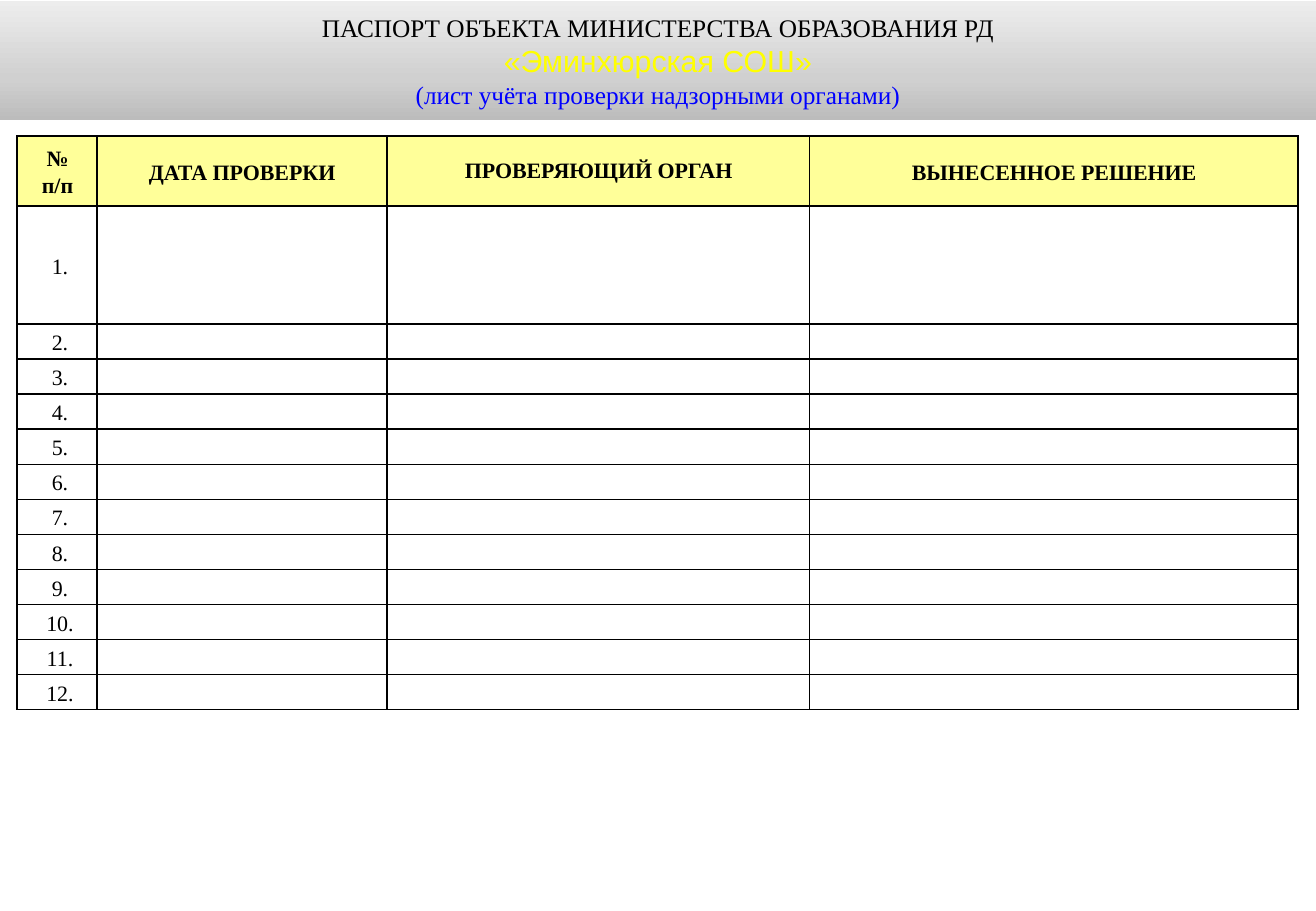
from copy import deepcopy
from dataclasses import dataclass

from lxml import etree
from pptx import Presentation
from pptx.dml.color import RGBColor
from pptx.enum.text import MSO_ANCHOR, MSO_AUTO_SIZE, PP_ALIGN
from pptx.oxml.ns import qn
from pptx.util import Pt

CENTER = PP_ALIGN.CENTER
MIDDLE = MSO_ANCHOR.MIDDLE
NO_FIT = MSO_AUTO_SIZE.NONE


@dataclass(frozen=True)
class Theme:
    serif: str = "Times New Roman"
    sans: str = "Arial"
    black: str = "000000"
    white: str = "FFFFFF"
    yellow: str = "FFFF00"
    blue: str = "0000FF"
    header_fill: str = "FFFF99"
    band: tuple = ((0, "BCBCBC"), (0.35, "D0D0D0"), (1, "EDEDED"))
    title_size: float = 15
    school_size: float = 18
    table_size: float = 13
    border: float = 1


@dataclass(frozen=True)
class TitleLine:
    text: str
    size: float
    font: str
    color: str


@dataclass(frozen=True)
class Column:
    heading: str
    width: float
    indent: float = 0
    spacing: object = 1.15


THEME = Theme()
TITLE = (
    TitleLine("ПАСПОРТ ОБЪЕКТА МИНИСТЕРСТВА ОБРАЗОВАНИЯ РД", THEME.title_size, THEME.serif, THEME.black),
    TitleLine("«Эминхюрская СОШ»", THEME.school_size, THEME.sans, THEME.yellow),
    TitleLine("(лист учёта проверки надзорными органами)", THEME.title_size, THEME.serif, THEME.blue),
)
COLUMNS = (
    Column("№\nп/п", 47.5, indent=0.7),
    Column("ДАТА ПРОВЕРКИ", 172),
    Column("ПРОВЕРЯЮЩИЙ ОРГАН", 250.5, spacing=Pt(14)),
    Column("ВЫНЕСЕННОЕ РЕШЕНИЕ", 289.5),
)
CHECKS = 12
HEADER_HEIGHT, FIRST_HEIGHT, ROW_HEIGHT = 41.5, 70, 20.8
NUMBER_INDENT = 3.6


def set_font(font, size: float, name: str, color: str, bold: bool = False) -> None:
    font.size, font.name, font.bold = Pt(size), name, bold
    font.color.rgb = RGBColor.from_string(color)


def fill_band(sp) -> None:
    """Fill the title with a vertical three-stop gradient."""
    sp.fill.gradient()
    sp.fill.gradient_angle = 90
    stops = sp._element.spPr.find(".//" + qn("a:gsLst"))
    stops.append(deepcopy(stops[0]))
    for stop, (position, color) in zip(sp.fill.gradient_stops, THEME.band):
        stop.position = position
        stop.color.rgb = RGBColor.from_string(color)


def draw_title(sp) -> None:
    sp.left, sp.top, sp.width, sp.height = Pt(0), Pt(0.7), Pt(780), Pt(70.5)
    fill_band(sp)
    tf = sp.text_frame
    tf.auto_size, tf.word_wrap, tf.vertical_anchor = NO_FIT, True, MIDDLE
    tf.text = "\n".join(line.text for line in TITLE)
    for p, line in zip(tf.paragraphs, TITLE):
        p.alignment = CENTER
        set_font(p.font, line.size, line.font, line.color)


def add_borders(cell) -> None:
    props = cell._tc.get_or_add_tcPr()
    for i, side in enumerate(("a:lnL", "a:lnR", "a:lnT", "a:lnB")):
        ln = etree.Element(qn(side), w=str(Pt(THEME.border)))
        fill = etree.SubElement(ln, qn("a:solidFill"))
        etree.SubElement(fill, qn("a:srgbClr"), val=THEME.black)
        props.insert(i, ln)


def draw_cell(cell, text: str, fill: str, bold: bool = False,
              indent: float = 0, spacing=1.15) -> None:
    cell.margin_left = cell.margin_right = Pt(2)
    cell.margin_top = cell.margin_bottom = 0
    cell.vertical_anchor = MIDDLE
    cell.fill.solid()
    cell.fill.fore_color.rgb = RGBColor.from_string(fill)
    add_borders(cell)
    cell.text_frame.text = text
    for p in cell.text_frame.paragraphs:
        p.alignment, p.line_spacing = CENTER, spacing
        set_font(p.font, THEME.table_size, THEME.serif, THEME.black, bold)
        p._p.get_or_add_pPr().set("marL", str(Pt(indent)))
        if not text:  # keeps blank rows at their set height
            etree.SubElement(p._p, qn("a:endParaRPr"), sz=str(int(THEME.table_size * 100)))


def draw_table(slide) -> None:
    heights = [HEADER_HEIGHT, FIRST_HEIGHT] + [ROW_HEIGHT] * (CHECKS - 1)
    width = sum(c.width for c in COLUMNS)
    table = slide.shapes.add_table(len(heights), len(COLUMNS), Pt(10), Pt(80.6),
                                   Pt(width), Pt(sum(heights))).table
    table.first_row = table.horz_banding = False
    for row, height in zip(table.rows, heights):
        row.height = Pt(height)
    for i, column in enumerate(COLUMNS):
        table.columns[i].width = Pt(column.width)
        draw_cell(table.cell(0, i), column.heading, THEME.header_fill, True,
                  column.indent, column.spacing)
        for number in range(1, CHECKS + 1):
            text, indent = (f"{number}.", NUMBER_INDENT) if i == 0 else ("", 0)
            draw_cell(table.cell(number, i), text, THEME.white, indent=indent)


def main() -> None:
    prs = Presentation()
    prs.slide_width, prs.slide_height = Pt(780), Pt(540)
    slide = prs.slides.add_slide(prs.slide_layouts[5])
    # Title band
    draw_title(slide.shapes.title)
    # Inspection log
    draw_table(slide)
    prs.save("out.pptx")


if __name__ == "__main__":
    main()
